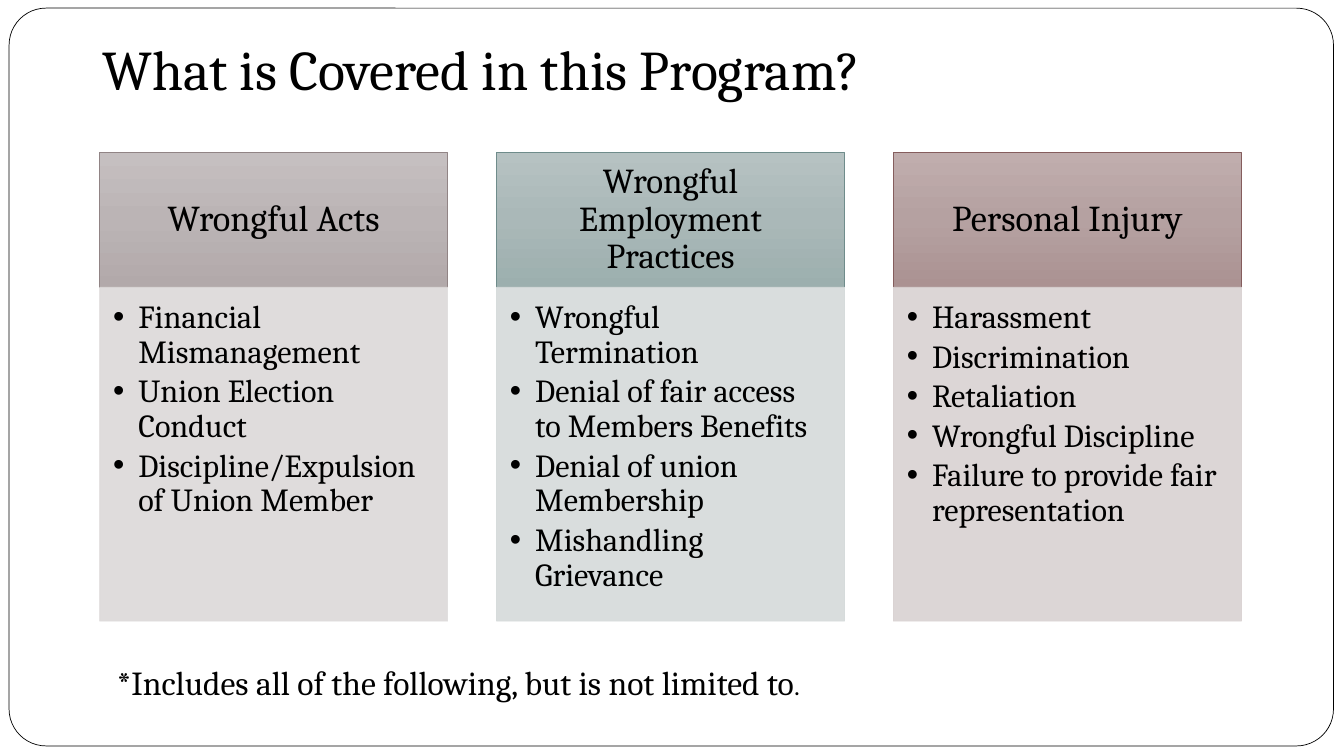
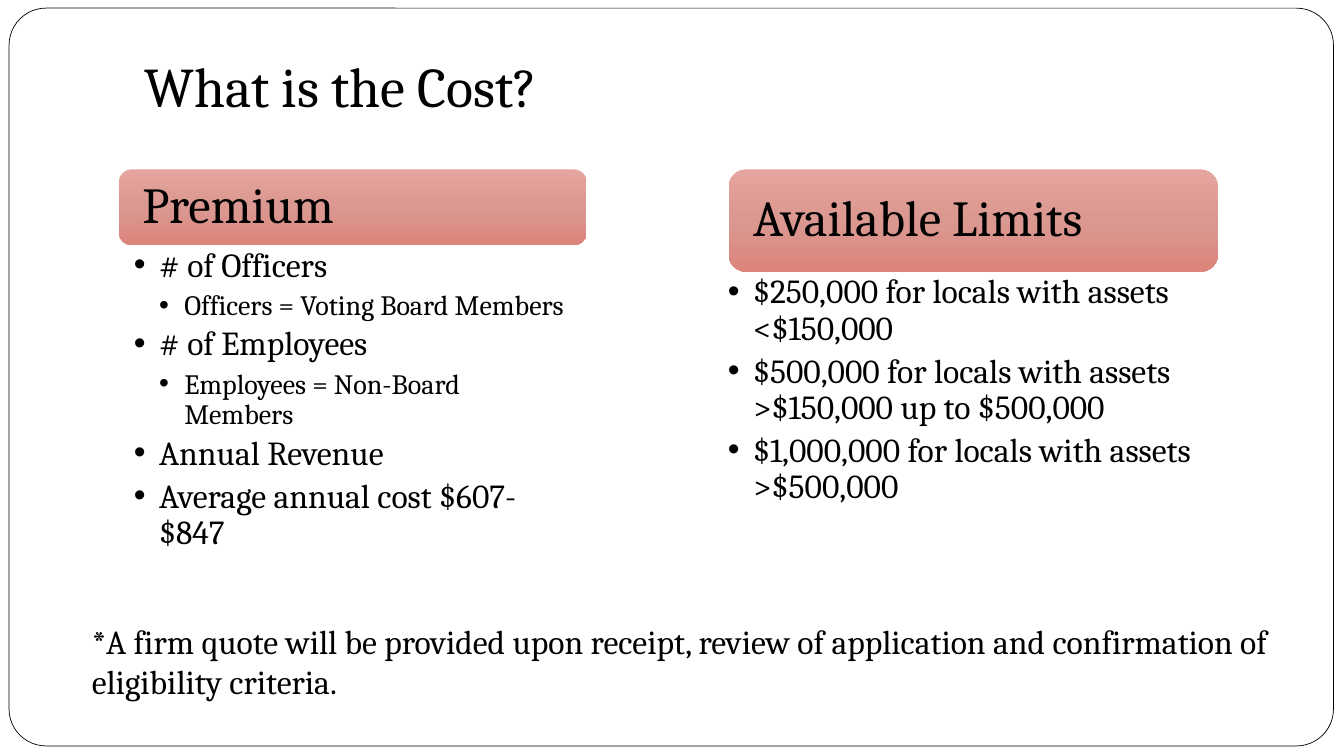
from copy import deepcopy

from lxml.etree import SubElement
from pptx import Presentation
from pptx.dml.color import RGBColor
from pptx.enum.shapes import MSO_SHAPE as Preset
from pptx.enum.text import MSO_ANCHOR as Anchor, MSO_AUTO_SIZE as AutoSize, PP_ALIGN as Align
from pptx.oxml.ns import qn
from pptx.util import Pt

SERIF = "Cambria"
BLACK = "000000"
WHITE = "FFFFFF"
ROSE = ("E5A49E", "DB9891", "DB857C")
INDENT = 18

COVERAGE = [
    ("Wrongful Acts", 26, ("C5BFC0", "BBB4B5", "B2A9AA"), "918485", "DCD9D9",
     ["Financial Mismanagement", "Union Election Conduct",
      "Discipline/Expulsion of Union Member"]),
    ("Wrongful Employment Practices", 25, ("B6C2C2", "AAB8B8", "9CAFAE"), "6F8C8B", "D5DADA",
     ["Wrongful Termination", "Denial of fair access to Members Benefits",
      "Denial of union Membership", "Mishandling Grievance"]),
    ("Personal Injury", 26, ("C0ADAD", "B5A1A1", "AB9292"), "855D5D", "D9D2D2",
     ["Harassment", "Discrimination", "Retaliation", "Wrongful Discipline",
      "Failure to provide fair representation"]),
]
PREMIUM = [
    (1, "# of Officers"), (2, "Officers = Voting Board Members"),
    (1, "# of Employees"), (2, "Employees = Non-Board Members"),
    (1, "Annual Revenue"), (1, "Average annual cost $607-$847"),
]
LIMITS = [
    (1, "$250,000 for locals with assets <$150,000"),
    (1, "$500,000 for locals with assets >$150,000 up to $500,000"),
    (1, "$1,000,000 for locals with assets >$500,000"),
]


def color(value):
    return RGBColor.from_string(value)


def style(font, size, face=SERIF):
    font.name = face
    font.size = Pt(size)
    font.color.rgb = color(BLACK)


def set_frame(frame, insets, anchor):
    frame.word_wrap = True
    frame.auto_size = AutoSize.NONE
    frame.vertical_anchor = anchor
    (frame.margin_left, frame.margin_top,
     frame.margin_right, frame.margin_bottom) = map(Pt, insets)


def add_panel(slide, preset, box, outline=None, weight=0.5):
    panel = slide.shapes.add_shape(preset, *map(Pt, box))
    panel.shadow.inherit = False
    if outline:
        panel.line.color.rgb = color(outline)
        panel.line.width = Pt(weight)
    else:
        panel.line.fill.background()
    return panel


def shade(panel, tones):
    panel.fill.gradient()
    panel.fill.gradient_angle = 270
    stop_list = panel.element.spPr.find(".//" + qn("a:gsLst"))
    stop_list.insert(1, deepcopy(stop_list[0]))
    for index, (stop, tone) in enumerate(zip(panel.fill.gradient_stops, tones)):
        stop.position = index / 2
        stop.color.rgb = color(tone)


def make_translucent(panel, percent):
    for tint in panel.element.spPr.iter(qn("a:srgbClr")):
        SubElement(tint, qn("a:alpha"), val=str(percent * 1000))


def write_heading(panel, heading, size, insets, align):
    set_frame(panel.text_frame, insets, Anchor.MIDDLE)
    paragraph = panel.text_frame.paragraphs[0]
    paragraph.text = heading
    paragraph.alignment = align
    paragraph.line_spacing = 0.9
    style(paragraph.runs[0].font, size)


def write_bullets(frame, items, sizes, gap):
    frame.text = "\n".join(words for _, words in items)
    for paragraph, (level, _) in zip(frame.paragraphs, items):
        size = sizes[level]
        paragraph.level = level
        paragraph.alignment = Align.LEFT
        paragraph.line_spacing = 0.9
        paragraph.space_before = Pt(0)
        paragraph.space_after = Pt(round(size * gap, 1))
        style(paragraph.runs[0].font, size)
        properties = paragraph.runs[0].font._element.getparent().getparent().get_or_add_pPr()
        properties.set("marL", str(Pt(INDENT * level)))
        properties.set("indent", str(Pt(-INDENT)))
        SubElement(properties, qn("a:buFont"), typeface="Arial")
        SubElement(properties, qn("a:buChar"), char="•")


def add_frame(slide, layout):
    border = add_panel(slide, Preset.ROUNDED_RECTANGLE, (6.5, 5.8, 946, 527), BLACK)
    border.adjustments[0] = 0.05
    border.fill.solid()
    border.fill.fore_color.rgb = color(WHITE)
    layout.shapes.element.insert(2, border.element)


def place_title(slide, words, box):
    title = slide.shapes.title
    title.left, title.top, title.width, title.height = map(Pt, box)
    set_frame(title.text_frame, (7.2, 3.6, 7.2, 7.2), Anchor.BOTTOM)
    title.text_frame.text = words
    paragraph = title.text_frame.paragraphs[0]
    paragraph.alignment = Align.LEFT
    style(paragraph.runs[0].font, 40)


def add_footnote(slide, words, box):
    note = slide.shapes.add_textbox(*map(Pt, box))
    set_frame(note.text_frame, (7.2, 3.6, 7.2, 3.6), Anchor.MIDDLE)
    note.text_frame.text = words
    paragraph = note.text_frame.paragraphs[0]
    style(paragraph.runs[0].font, 24)
    return paragraph


def add_coverage_card(slide, box, card):
    left, top, width, height = box
    heading, size, tones, outline, tint, items = card
    head_height = 96.5
    head = add_panel(slide, Preset.RECTANGLE, (left, top, width, head_height), outline)
    shade(head, tones)
    write_heading(head, heading, size, (14, 8, 14, 8), Align.CENTER)
    body = add_panel(slide, Preset.RECTANGLE,
                     (left, top + head_height, width, height - head_height), tint)
    body.fill.solid()
    body.fill.fore_color.rgb = color(tint)
    make_translucent(body, 90)
    set_frame(body.text_frame, (9.6, 9.6, 12.8, 14.4), Anchor.TOP)
    write_bullets(body.text_frame, [(1, item) for item in items], {1: 23}, 0.15)


def add_cost_column(slide, box, head_height, heading, items, shift, list_width):
    left, top, width, height = box
    head = add_panel(slide, Preset.ROUNDED_RECTANGLE, (left, top, width, head_height))
    shade(head, ROSE)
    write_heading(head, heading, 36, (14, 11, 14, 11), Align.LEFT)
    factors = slide.shapes.add_textbox(Pt(left + shift), Pt(top + head_height),
                                       Pt(list_width), Pt(height - head_height))
    set_frame(factors.text_frame, (10.6, 2.2, 13.5, 2.2), Anchor.TOP)
    write_bullets(factors.text_frame, items, {1: 24, 2: 20}, 0.2)


def build_coverage(slide):
    place_title(slide, "What is Covered in this Program?", (66, 21, 816, 59))
    left, card_width, gap = 71.2, 248.6, 34.9
    for index, card in enumerate(COVERAGE):
        add_coverage_card(slide, (left + index * (card_width + gap), 108.7, card_width, 335), card)
    note = add_footnote(slide, "*Includes all of the following, but is not limited to",
                        (76.5, 469.5, 534, 36))
    stop = note.add_run()
    stop.text = "."
    style(stop.font, 18, "Calibri")


def build_cost(slide):
    place_title(slide, "What is the Cost?", (96, 24.5, 816, 67.5))
    add_cost_column(slide, (85, 121, 334, 288.5), 54, "Premium", PREMIUM, 0, 334)
    add_cost_column(slide, (520.5, 121, 349.5, 310), 73, "Available Limits", LIMITS, -11.2, 398)
    add_footnote(slide, "*A firm quote will be provided upon receipt, review of application "
                        "and confirmation of eligibility criteria.", (58.5, 439.2, 865.5, 65.5))


def main():
    deck = Presentation()
    deck.slide_width, deck.slide_height = Pt(960), Pt(540)
    layout = deck.slide_layouts[5]
    coverage, cost = (deck.slides.add_slide(layout) for _ in range(2))
    add_frame(coverage, layout)
    build_coverage(coverage)
    build_cost(cost)
    deck.save("out.pptx")


if __name__ == "__main__":
    main()
